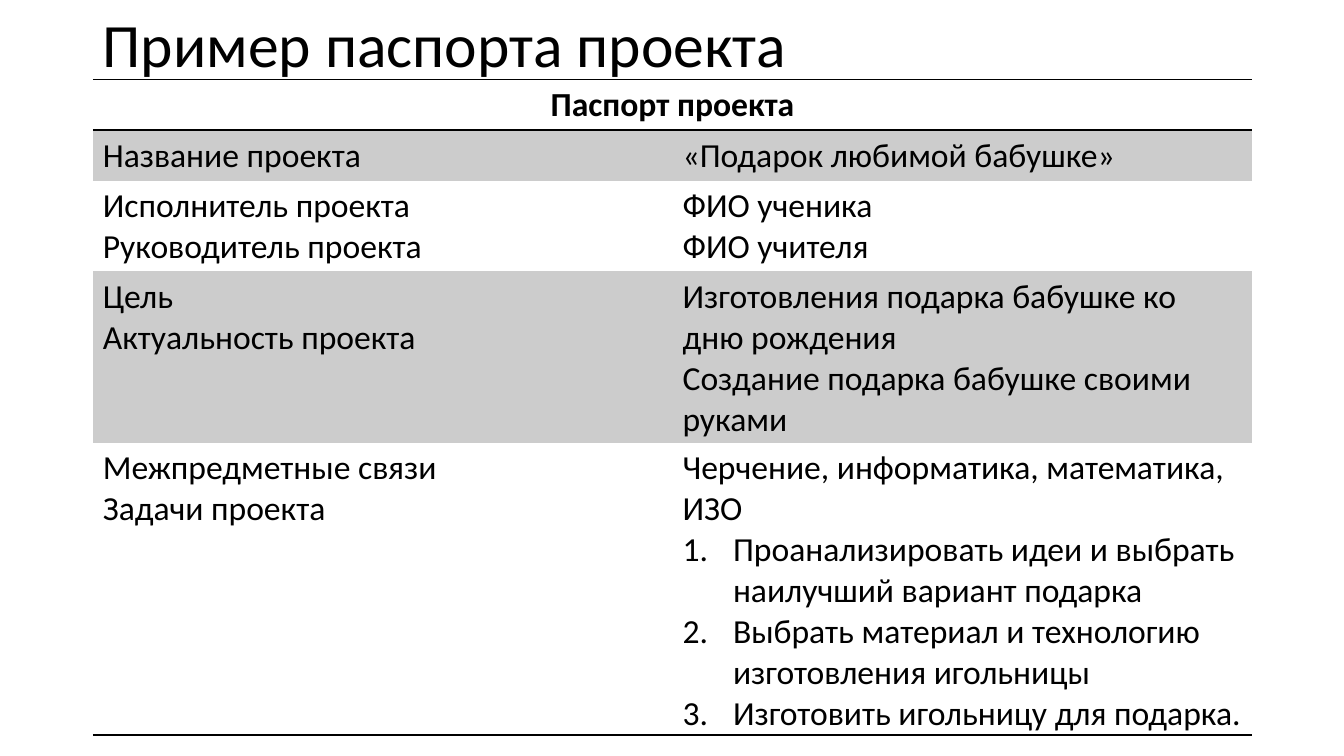
from lxml import etree
from pptx import Presentation
from pptx.dml.color import RGBColor
from pptx.enum.text import MSO_ANCHOR, PP_ALIGN
from pptx.oxml.ns import qn
from pptx.util import Inches, Pt

BLACK = RGBColor(0x00, 0x00, 0x00)
BAND_GREY = RGBColor(0xCC, 0xCC, 0xCC)
FONT = "Calibri"
PLAIN_TABLE_STYLE = "{2D5ABB26-0587-4C30-8999-92F81FD0307C}"

SLIDE_WIDTH, SLIDE_HEIGHT = 13.33, 7.5
MARGIN = 0.92
CONTENT_WIDTH = 11.5
LINE_HEIGHT, CELL_PADDING = 0.4, 0.1

HEADING = "Паспорт проекта"
# Label lines, value lines, numbered tasks, lines the row takes
PASSPORT = [
    (["Название проекта"], ["«Подарок любимой бабушке»"], [], 1),
    (["Исполнитель проекта", "Руководитель проекта"],
     ["ФИО ученика", "ФИО учителя"], [], 2),
    (["Цель", "Актуальность проекта"],
     ["Изготовления подарка бабушке ко дню рождения",
      "Создание подарка бабушке своими руками"], [], 4),
    (["Межпредметные связи", "Задачи проекта"],
     ["Черчение, информатика, математика, ИЗО"],
     ["Проанализировать идеи и выбрать наилучший вариант подарка",
      "Выбрать материал и технологию изготовления игольницы",
      "Изготовить игольницу для подарка."], 7),
]


def add_run(paragraph, text, size, bold=False):
    run = paragraph.add_run()
    run.text = text
    run.font.name = FONT
    run.font.size = Pt(size)
    run.font.bold = bold
    run.font.color.rgb = BLACK


def number_paragraph(paragraph):
    properties = paragraph._p.get_or_add_pPr()
    properties.set("marL", str(Inches(0.5)))
    properties.set("indent", str(-Inches(0.5)))
    etree.SubElement(properties, qn("a:buFont"), typeface="+mj-lt")
    etree.SubElement(properties, qn("a:buAutoNum"), type="arabicPeriod")


def fill_cell(cell, lines, tasks=(), bold=False, align=PP_ALIGN.LEFT):
    frame = cell.text_frame
    for index, text in enumerate([*lines, *tasks]):
        paragraph = frame.add_paragraph() if index else frame.paragraphs[0]
        paragraph.alignment = align
        if index >= len(lines):
            number_paragraph(paragraph)
        add_run(paragraph, text, 24, bold)


def add_borders(cell, sides):
    properties = cell._tc.get_or_add_tcPr()
    for position, side in enumerate(sides):
        line = etree.Element(qn(f"a:ln{side}"), w=str(Pt(1)))
        fill = etree.SubElement(line, qn("a:solidFill"))
        etree.SubElement(fill, qn("a:srgbClr"), val=str(BLACK))
        properties.insert(position, line)


def add_title(slide, left, top, width, height):
    box = slide.shapes.add_textbox(*map(Inches, (left, top, width, height)))
    frame = box.text_frame
    frame.word_wrap = True
    frame.vertical_anchor = MSO_ANCHOR.MIDDLE
    paragraph = frame.paragraphs[0]
    paragraph.line_spacing = 0.9
    add_run(paragraph, "Пример паспорта проекта", 44)


def add_passport(slide, left, top, width):
    line_counts = [1] + [row[-1] for row in PASSPORT]
    heights = [CELL_PADDING + LINE_HEIGHT * count for count in line_counts]
    frame = slide.shapes.add_table(
        len(heights), 2, *map(Inches, (left, top, width, sum(heights))))
    table = frame.table
    table.first_row = table.horz_banding = False
    table._tbl.tblPr.find(qn("a:tableStyleId")).text = PLAIN_TABLE_STYLE
    for row, height in zip(table.rows, heights):
        row.height = Inches(height)

    # Heading row across both columns
    heading = table.cell(0, 0)
    heading.merge(table.cell(0, 1))
    fill_cell(heading, [HEADING], bold=True, align=PP_ALIGN.CENTER)

    # Body rows, every other one grey
    for index, (labels, values, tasks, _) in enumerate(PASSPORT, 1):
        fill_cell(table.cell(index, 0), labels)
        fill_cell(table.cell(index, 1), values, tasks)
        if index % 2:
            for cell in table.rows[index].cells:
                cell.fill.solid()
                cell.fill.fore_color.rgb = BAND_GREY

    # Rules around the heading and under the last row
    for column in range(2):
        add_borders(table.cell(0, column), "TB")
        add_borders(table.cell(len(PASSPORT), column), "B")


def main():
    presentation = Presentation()
    presentation.slide_width = Inches(SLIDE_WIDTH)
    presentation.slide_height = Inches(SLIDE_HEIGHT)
    slide = presentation.slides.add_slide(presentation.slide_layouts[6])
    add_title(slide, MARGIN, -0.25, CONTENT_WIDTH, 1.45)
    add_passport(slide, MARGIN, 0.79, CONTENT_WIDTH)
    presentation.save("out.pptx")


if __name__ == "__main__":
    main()
